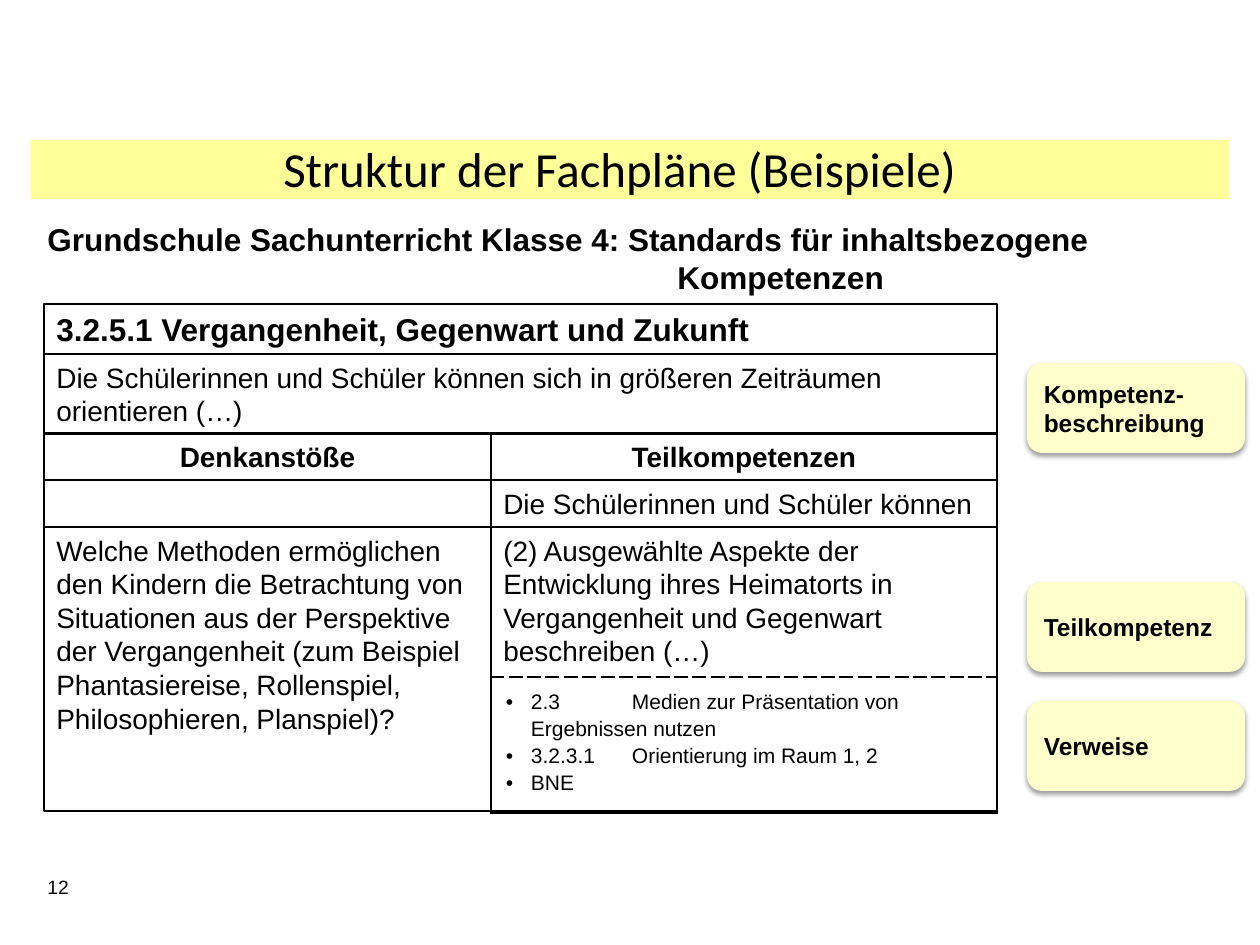
from lxml import etree
from pptx import Presentation
from pptx.dml.color import RGBColor
from pptx.enum.shapes import MSO_SHAPE
from pptx.enum.text import MSO_ANCHOR, PP_ALIGN
from pptx.oxml import parse_xml
from pptx.oxml.ns import nsdecls, qn
from pptx.util import Emu, Pt

RECTANGLE, ROUNDED = MSO_SHAPE.RECTANGLE, MSO_SHAPE.ROUNDED_RECTANGLE
TOP, MIDDLE = MSO_ANCHOR.TOP, MSO_ANCHOR.MIDDLE
LEFT, CENTER = PP_ALIGN.LEFT, PP_ALIGN.CENTER
BLACK, BAND_YELLOW, LABEL_YELLOW = "000000", "FFFF99", "FFFFCC"


def px(length):
    return Emu(round(length * 914400 / 126))


def color(value):
    return RGBColor.from_string(value)


class SlideBuilder:
    font = "Arial"

    def __init__(self, slide):
        self.slide = slide

    def add_run(self, paragraph, text, size, bold=False, align=LEFT, font=None):
        paragraph.alignment = align
        run = paragraph.add_run()
        run.text = text
        run.font.size = Pt(size)
        run.font.bold = bold
        run.font.name = font or self.font
        run.font.color.rgb = color(BLACK)

    def tab_stop(self, paragraph, position):
        tabs = etree.SubElement(paragraph._p.get_or_add_pPr(), qn("a:tabLst"))
        etree.SubElement(tabs, qn("a:tab"), pos=str(px(position)), algn="l")

    def bullet(self, paragraph, indent):
        properties = paragraph._p.get_or_add_pPr()
        properties.set("marL", str(px(indent)))
        properties.set("indent", str(-px(indent)))
        etree.SubElement(properties, qn("a:buFont"), typeface=self.font)
        etree.SubElement(properties, qn("a:buChar"), char="•")

    def text(self, box, lines, size, bold=False, align=LEFT, font=None, tab=None):
        frame = self.slide.shapes.add_textbox(*map(px, box)).text_frame
        frame.word_wrap = True
        paragraph = frame.paragraphs[0]
        if tab:
            self.tab_stop(paragraph, tab)
        for index, line in enumerate(lines):
            if index:
                paragraph.add_line_break()
            self.add_run(paragraph, line, size, bold, align, font)

    def shape(self, kind, box, fill=None, line=None):
        shape = self.slide.shapes.add_shape(kind, *map(px, box))
        shape.shadow.inherit = False
        if fill:
            shape.fill.solid()
            shape.fill.fore_color.rgb = color(fill)
        else:
            shape.fill.background()
        if line is None:
            shape.line.fill.background()
        else:
            shape.line.color.rgb = color(BLACK)
            shape.line.width = Pt(line)
        return shape

    def frame(self, box, text="", size=16, bold=False, align=LEFT, line=0.75):
        shape = self.shape(RECTANGLE, box, line=line)
        shape.text_frame.vertical_anchor = TOP
        if text:
            self.add_run(shape.text_frame.paragraphs[0], text, size, bold, align)

    def label(self, box, text):
        shape = self.shape(ROUNDED, box, fill=LABEL_YELLOW)
        shape.text_frame.vertical_anchor = MIDDLE
        self.add_run(shape.text_frame.paragraphs[0], text, 14, bold=True)
        effects = shape._element.spPr.find(qn("a:effectLst"))
        effects.append(parse_xml(
            f'<a:outerShdw {nsdecls("a")} blurRad="{Pt(3.1)}" dist="{Pt(1.6)}" '
            f'dir="5400000" rotWithShape="0"><a:srgbClr val="{BLACK}">'
            '<a:alpha val="38000"/></a:srgbClr></a:outerShdw>'))

    def reference_table(self, box, items):
        table = self.slide.shapes.add_table(1, 1, *map(px, box)).table
        table.first_row = table.horz_banding = False
        cell = table.cell(0, 0)
        cell.margin_left = cell.margin_right = px(15)
        cell.margin_top = cell.margin_bottom = px(10)
        for side in "LRTB":
            dash = "dash" if side == "T" else "solid"
            cell._tc.get_or_add_tcPr().append(parse_xml(
                f'<a:ln{side} {nsdecls("a")} w="{Pt(1)}"><a:solidFill>'
                f'<a:srgbClr val="{BLACK}"/></a:solidFill>'
                f'<a:prstDash val="{dash}"/></a:ln{side}>'))
        cell.fill.background()
        for index, item in enumerate(items):
            frame = cell.text_frame
            paragraph = frame.add_paragraph() if index else frame.paragraphs[0]
            self.bullet(paragraph, 25)
            self.tab_stop(paragraph, 126)
            paragraph.line_spacing = 1.15
            self.add_run(paragraph, item, 12)


def main():
    presentation = Presentation()
    presentation.slide_width, presentation.slide_height = px(1260), px(945)
    slide = presentation.slides.add_slide(presentation.slide_layouts[6])
    builder = SlideBuilder(slide)

    # Title band and heading
    builder.shape(RECTANGLE, (31, 140, 1198, 59), fill=BAND_YELLOW)
    builder.text((26, 132, 1198, 72), ["Struktur der Fachpläne (Beispiele) "],
                 28, align=CENTER, font="Calibri")
    builder.text((35, 214, 1230, 89),
                 ["Grundschule Sachunterricht Klasse 4: Standards für inhaltsbezogene",
                  "\tKompetenzen"], 18, bold=True, tab=630)

    # Full-width frames
    left, middle, right = 44, 491, 997
    builder.frame((left, 304, right - left, 50),
                  "3.2.5.1 Vergangenheit, Gegenwart und Zukunft", 18, bold=True, line=0)
    builder.frame((left, 354, right - left, 80),
                  "Die Schülerinnen und Schüler können sich in größeren Zeiträumen "
                  "orientieren (…)")

    # Two-column frames: top, height, left text, right text, bold, alignment
    rows = [
        (433, 47, "Denkanstöße", "Teilkompetenzen", True, CENTER),
        (480, 47, "", "Die Schülerinnen und Schüler können", False, LEFT),
        (527, 284,
         "Welche Methoden ermöglichen den Kindern die Betrachtung von Situationen "
         "aus der Perspektive der Vergangenheit (zum Beispiel Phantasiereise, "
         "Rollenspiel, Philosophieren, Planspiel)?",
         "(2) Ausgewählte Aspekte der Entwicklung ihres Heimatorts in "
         "Vergangenheit und Gegenwart beschreiben (…)", False, LEFT),
    ]
    for top, height, prompt, competence, bold, align in rows:
        builder.frame((left, top, middle - left, height), prompt, 16, bold, align)
        builder.frame((middle, top, right - middle, height), competence, 16, bold, align)

    # References
    builder.reference_table((middle, 677, right - middle, 135), [
        "2.3\tMedien zur Präsentation von Ergebnissen nutzen",
        "3.2.3.1\tOrientierung im Raum 1, 2",
        "BNE",
    ])

    # Side labels
    for top, text in [(582, "Teilkompetenz"), (363, "Kompetenz-beschreibung"),
                      (701, "Verweise")]:
        builder.label((1027, top, 218, 90), text)

    # Page number
    builder.text((35, 869, 69, 37), ["12"], 11)

    presentation.save("out.pptx")


if __name__ == "__main__":
    main()
